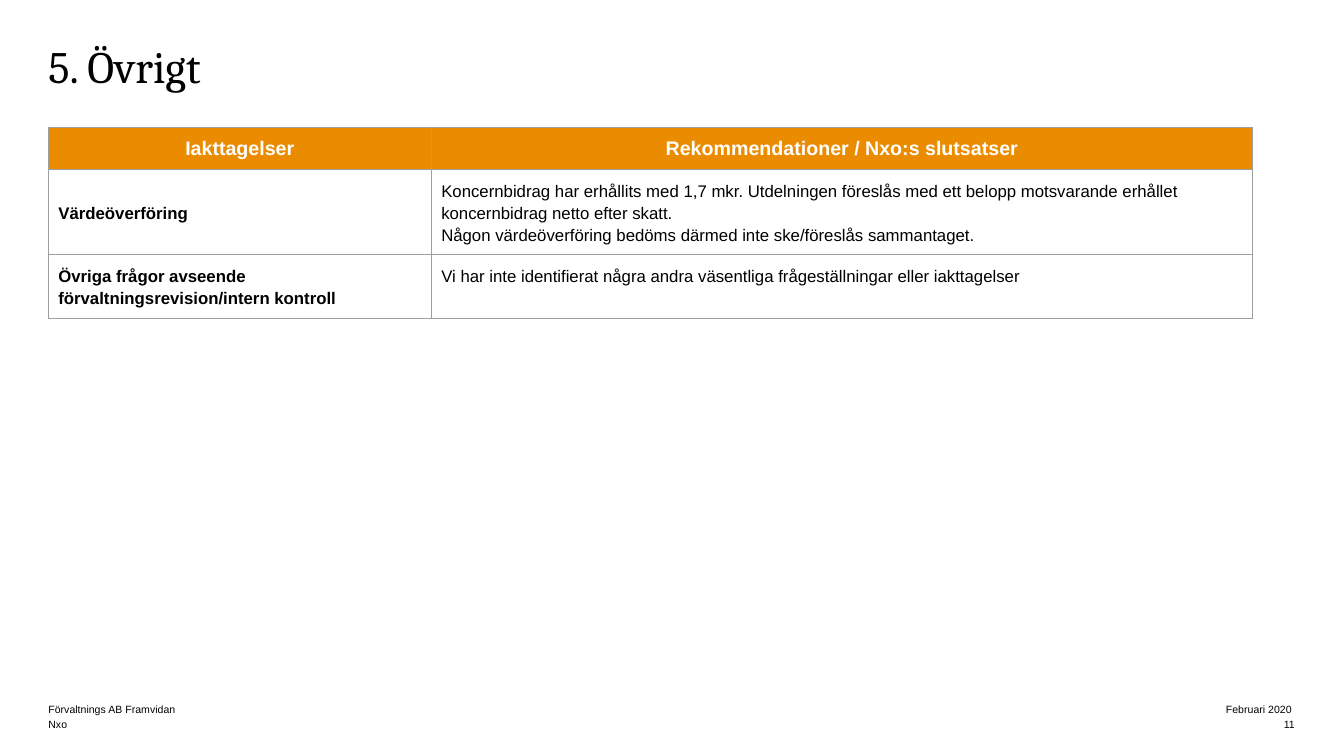
from lxml import etree
from pptx import Presentation
from pptx.dml.color import RGBColor
from pptx.enum.text import MSO_ANCHOR, MSO_AUTO_SIZE, PP_ALIGN
from pptx.oxml.ns import qn
from pptx.util import Cm, Pt

LEFT, CENTER, RIGHT = PP_ALIGN.LEFT, PP_ALIGN.CENTER, PP_ALIGN.RIGHT
TOP, MIDDLE, BOTTOM = MSO_ANCHOR.TOP, MSO_ANCHOR.MIDDLE, MSO_ANCHOR.BOTTOM
BLACK, WHITE, ORANGE, GREY = "000000", "FFFFFF", "EB8C00", "9E9E9E"
MARGIN = 1.22
COLUMN_WIDTHS = (9.65, 20.7)
ROW_HEIGHTS = (1.07, 2.14, 1.61)
ROWS = (
    ("Iakttagelser", "Rekommendationer / Nxo:s slutsatser"),
    ("Värdeöverföring",
     "Koncernbidrag har erhållits med 1,7 mkr. Utdelningen föreslås med ett belopp "
     "motsvarande erhållet koncernbidrag netto efter skatt.\n"
     "Någon värdeöverföring bedöms därmed inte ske/föreslås sammantaget."),
    ("Övriga frågor avseende förvaltningsrevision/intern kontroll",
     "Vi har inte identifierat några andra väsentliga frågeställningar eller iakttagelser"),
)
FOOTERS = (
    ("Förvaltnings AB Framvidan", MARGIN, 17.65, 15.21, LEFT),
    ("Nxo", MARGIN, 18.03, 15.21, LEFT),
    ("Februari 2020 ", 22.83, 17.65, 9.8, RIGHT),
    ("11", 22.83, 18.03, 9.8, RIGHT),
)


def color(value):
    """Turn a hex string into a colour."""
    return RGBColor.from_string(value)


def format_text(text_frame, size, font="Arial", text_color=BLACK, bold=False,
                alignment=LEFT, line_spacing=1.0):
    """Format every paragraph and run of a text frame."""
    for paragraph in text_frame.paragraphs:
        paragraph.alignment = alignment
        paragraph.line_spacing = line_spacing
        for run in paragraph.runs:
            run.font.name = font
            run.font.size = Pt(size)
            run.font.bold = bold
            run.font.color.rgb = color(text_color)


def prepare_frame(text_frame, anchor):
    """Remove margins, wrap the text and anchor it."""
    text_frame.margin_left = text_frame.margin_right = 0
    text_frame.margin_top = text_frame.margin_bottom = 0
    text_frame.word_wrap = True
    text_frame.auto_size = MSO_AUTO_SIZE.NONE
    text_frame.vertical_anchor = anchor


def add_title(slide, text):
    """Place the slide title in its placeholder."""
    title = slide.shapes.title
    title.left, title.top, title.width, title.height = Cm(MARGIN), Cm(1.19), Cm(31.4), Cm(1.85)
    title.text_frame.text = text
    prepare_frame(title.text_frame, TOP)
    format_text(title.text_frame, 32, font="Cambria", line_spacing=0.85)


def add_footer(slide, text, left, top, width, alignment):
    """Add one small line at the foot of the slide."""
    box = slide.shapes.add_textbox(Cm(left), Cm(top), Cm(width), Cm(0.38))
    box.text_frame.text = text
    prepare_frame(box.text_frame, BOTTOM)
    format_text(box.text_frame, 7.5, alignment=alignment)


def set_borders(cell):
    """Draw a thin grey line on all four sides of a cell."""
    properties = cell._tc.get_or_add_tcPr()
    for index, side in enumerate(("a:lnL", "a:lnR", "a:lnT", "a:lnB")):
        line = etree.Element(qn(side), w=str(Pt(0.75)))
        fill = etree.SubElement(line, qn("a:solidFill"))
        etree.SubElement(fill, qn("a:srgbClr"), val=GREY)
        properties.insert(index, line)


def format_cell(cell, is_header, is_label):
    """Format a cell by its role in the table."""
    cell.margin_left = cell.margin_right = Cm(0.25)
    cell.margin_top = cell.margin_bottom = Cm(0.25)
    cell.vertical_anchor = TOP
    if is_header:
        cell.fill.solid()
        cell.fill.fore_color.rgb = color(ORANGE)
        format_text(cell.text_frame, 14, text_color=WHITE, bold=True, alignment=CENTER)
    else:
        cell.fill.background()
        format_text(cell.text_frame, 12, bold=is_label, line_spacing=1.15)
        if is_label:
            cell.text_frame.paragraphs[0].space_before = Pt(4)
    set_borders(cell)


def add_findings_table(slide):
    """Add the table of findings and recommendations."""
    frame = slide.shapes.add_table(len(ROWS), len(COLUMN_WIDTHS), Cm(MARGIN), Cm(3.21),
                                   Cm(sum(COLUMN_WIDTHS)), Cm(sum(ROW_HEIGHTS)))
    table = frame.table
    for column, width in zip(table.columns, COLUMN_WIDTHS):
        column.width = Cm(width)
    for row_index, texts in enumerate(ROWS):
        table.rows[row_index].height = Cm(ROW_HEIGHTS[row_index])
        for column_index, text in enumerate(texts):
            cell = table.cell(row_index, column_index)
            cell.text_frame.text = text
            format_cell(cell, row_index == 0, column_index == 0)
    table.cell(1, 0).vertical_anchor = MIDDLE
    table.cell(2, 0).text_frame.paragraphs[0].space_after = Pt(2)


def main():
    """Build the slide and save it."""
    presentation = Presentation()
    presentation.slide_width, presentation.slide_height = Cm(33.87), Cm(19.05)
    slide = presentation.slides.add_slide(presentation.slide_layouts[5])
    add_title(slide, "5. Övrigt")
    add_findings_table(slide)
    for footer in FOOTERS:
        add_footer(slide, *footer)
    presentation.save("out.pptx")


if __name__ == "__main__":
    main()
